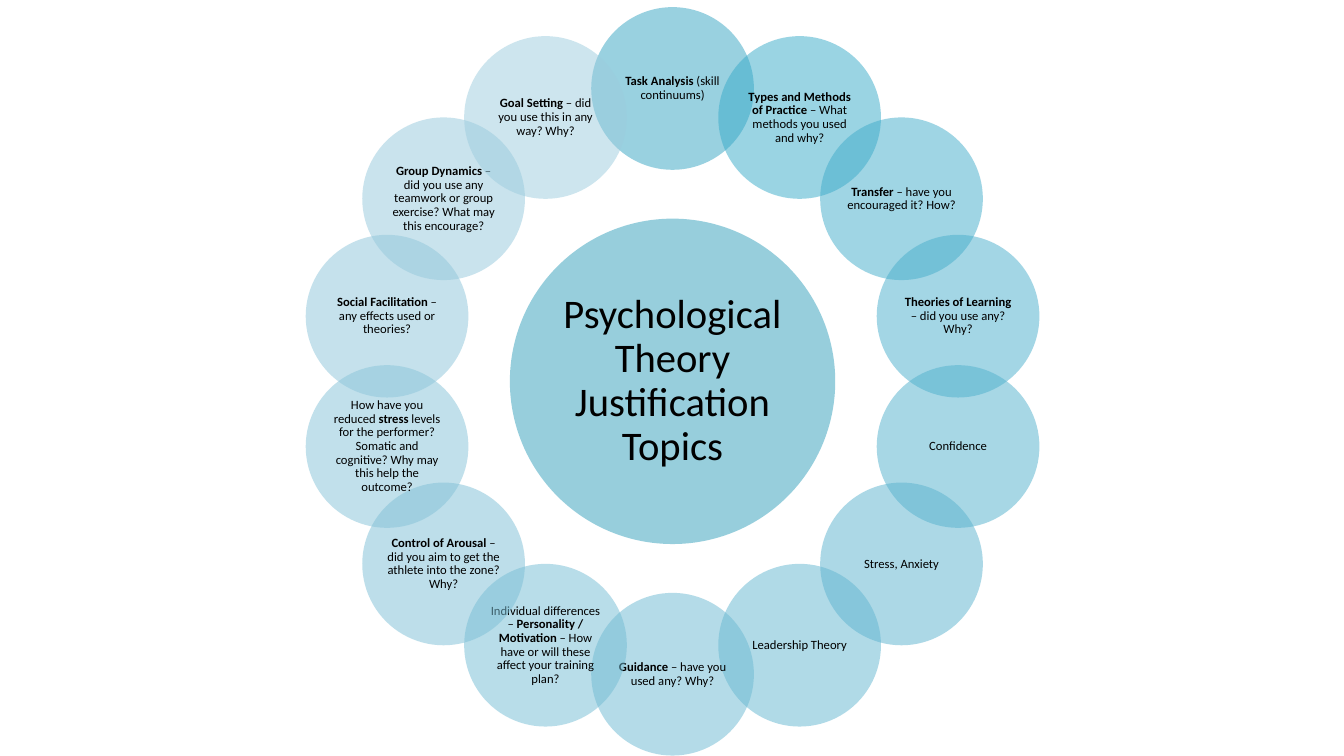
from math import cos, pi, sin, sqrt

from lxml.etree import SubElement
from pptx import Presentation
from pptx.dml.color import RGBColor
from pptx.enum.shapes import MSO_SHAPE as SHAPE
from pptx.enum.text import MSO_ANCHOR as ANCHOR, MSO_AUTO_SIZE as AUTO, PP_ALIGN as ALIGN
from pptx.oxml.ns import qn
from pptx.util import Cm, Pt

FONT = "Calibri"
COLOURS = {
    "text": "000000",
    "hub": "319FBB",
    "ring": ["34A4C2", "37AAC9", "40ACCA", "49AECC", "51B1CD", "5AB3CF", "62B6D1",
             "6BB9D2", "73BCD4", "7CBFD6", "84C2D8", "8CC5DA", "94C8DC", "9CCCDE"],
}
TITLE = "Psychological Theory Justification Topics"
# Clockwise from the top; ** switches bold on and off
TOPICS = [
    "**Task Analysis **(skill continuums)",
    "**Types and Methods of Practice **– What methods you used and why?",
    "**Transfer** – have you encouraged it? How?",
    "**Theories of Learning **– did you use any? Why?",
    "Confidence",
    "Stress, Anxiety",
    "Leadership Theory",
    "**Guidance** – have you used any? Why?",
    "Individual differences – **Personality / Motivation **"
    "– How have or will these affect your training plan?",
    "**Control of Arousal **– did you aim to get the athlete into the zone? Why?",
    "How have you reduced **stress** levels for the performer? "
    "Somatic and cognitive? Why may this help the outcome?",
    "**Social Facilitation **– any effects used or theories?",
    "**Group Dynamics **– did you use any teamwork or group exercise? "
    "What may this encourage?",
    "**Goal Setting **– did you use this in any way? Why?",
]


def write_text(sp, text, size, inset):
    """Fill a shape with centred text, with ** marking bold parts."""
    tf = sp.text_frame
    tf.word_wrap = True
    tf.auto_size = AUTO.NONE
    tf.vertical_anchor = ANCHOR.MIDDLE
    tf.margin_left = tf.margin_right = tf.margin_top = tf.margin_bottom = Cm(inset)
    p = tf.paragraphs[0]
    p.alignment = ALIGN.CENTER
    p.line_spacing = 0.9
    for i, part in enumerate(text.split("**")):
        if part:
            r = p.add_run()
            r.text = part
            r.font.name = FONT
            r.font.size = Pt(size)
            r.font.bold = i % 2 == 1
            r.font.color.rgb = RGBColor.from_string(COLOURS["text"])


def add_circle(slide, cx, cy, diameter, colour, opacity=50):
    sp = slide.shapes.add_shape(SHAPE.OVAL, Cm(cx - diameter / 2), Cm(cy - diameter / 2),
                                Cm(diameter), Cm(diameter))
    sp.shadow.inherit = False
    sp.line.fill.background()
    sp.fill.solid()
    sp.fill.fore_color.rgb = RGBColor.from_string(colour)
    clr = next(sp.fill._xPr.iter(qn("a:srgbClr")))
    SubElement(clr, qn("a:alpha"), val=str(opacity * 1000))
    return sp


def add_hub(slide, cx, cy, diameter):
    """Place the central circle with the slide title in its inscribed square."""
    circle = add_circle(slide, cx, cy, diameter, COLOURS["hub"])
    title = slide.shapes.title
    side = diameter / sqrt(2)
    title.left, title.top = Cm(cx - side / 2), Cm(cy - side / 2)
    title.width = title.height = Cm(side)
    write_text(title, TITLE, size=29, inset=0.1)
    circle._element.addnext(title._element)


def add_topic_ring(slide, cx, cy, radius, diameter):
    for i, (topic, colour) in enumerate(zip(TOPICS, COLOURS["ring"])):
        angle = 2 * pi * i / len(TOPICS)
        sp = add_circle(slide, cx + radius * sin(angle), cy - radius * cos(angle),
                        diameter, colour)
        write_text(sp, topic, size=9, inset=0.03)


def main():
    prs = Presentation()
    prs.slide_width, prs.slide_height = Cm(33.87), Cm(19.05)
    slide = prs.slides.add_slide(prs.slide_layouts[5])
    cx, cy, hub = 16.95, 9.61, 8.2
    add_hub(slide, cx, cy, diameter=hub)
    add_topic_ring(slide, cx, cy, radius=0.9 * hub, diameter=hub / 2)
    prs.save("out.pptx")


if __name__ == "__main__":
    main()
